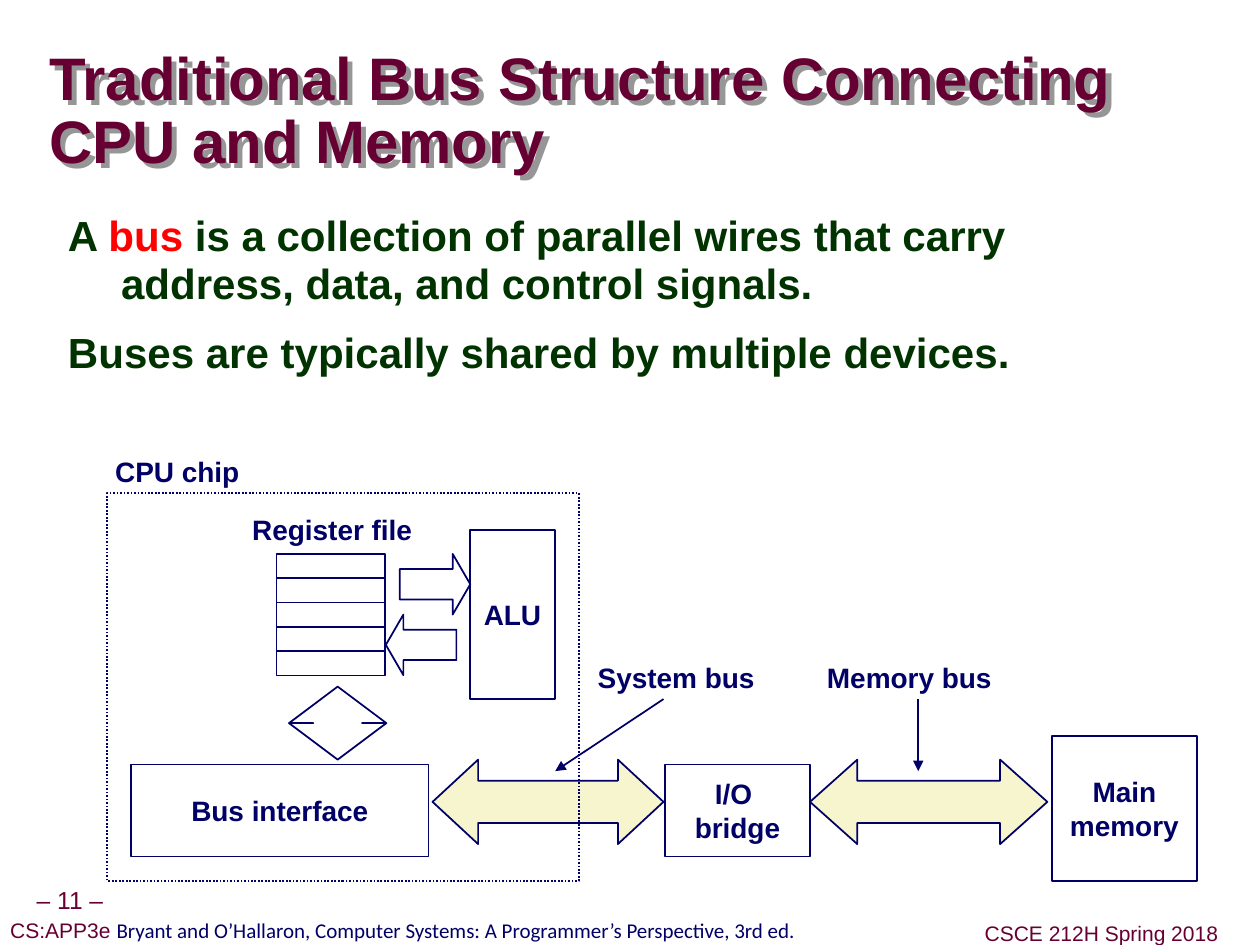
from dataclasses import dataclass
from lxml import etree
from pptx import Presentation
from pptx import util as u
from pptx.dml.color import RGBColor
from pptx.enum import dml, shapes, text
from pptx.oxml.ns import qn


@dataclass(frozen=True)
class Theme:
    wine: str = "660033"
    navy: str = "000066"
    green: str = "003300"
    red: str = "FF0000"
    cream: str = "F7F5CD"
    grey: str = "969696"
    face: str = "Arial"
    book: str = "Calibri"
    title: float = 34.2
    body: float = 24
    label: float = 16
    page: float = 14
    foot: float = 12


T = Theme()
KIND = shapes.MSO_SHAPE
ALIGN = text.PP_ALIGN
SIZE = (25.37, 19.02)

# Runs are (words, colour, points, face, bold); boxes are (left, top, width, height) in cm
TITLE = ("Traditional Bus Structure Connecting \vCPU and Memory", T.wine, T.title, T.face, True)
BODY = [
    [("A ", T.green), ("bus", T.red),
     (" is a collection of parallel wires that carry address, data, and control signals.", T.green)],
    [("Buses are typically shared by multiple devices.", T.green)],
]
FEET = [
    ((0.57, 17.75, 1.68, 0.79), [("– 11 –", T.wine, T.page, T.face, False)]),
    ((0, 18.39, 16.23, 0.71), [
        ("CS:APP3e ", T.wine, T.foot, T.face, False),
        ("Bryant and O’Hallaron, Computer Systems: A Programmer’s Perspective, 3rd ed.",
         T.navy, T.foot, T.book, False)]),
    ((19.69, 18.45, 4.98, 0.71), [("CSCE 212H Spring 2018", T.wine, T.foot, T.face, False)]),
]
UNITS = [
    ((21.18, 14.81, 2.92, 2.92), ["Main", "memory"]),
    ((13.39, 15.39, 2.92, 1.85), ["I/O ", "bridge"]),
    ((2.64, 15.39, 5.99, 1.85), ["Bus interface"]),
    ((9.47, 10.67, 1.7, 3.4), ["ALU"]),
]
# Each arrow ends with its adjustments; the upright one takes its head before its shaft
ARROWS = [
    (KIND.LEFT_RIGHT_ARROW, (16.31, 15.29, 4.78, 1.7), T.cream, (0.5, 0.56)),
    (KIND.LEFT_RIGHT_ARROW, (8.71, 15.29, 4.65, 1.7), T.cream, (0.5, 0.54)),
    (KIND.RIGHT_ARROW, (8.05, 11.15, 1.42, 1.22), None, (0.5, 0.29)),
    (KIND.LEFT_ARROW, (7.77, 12.37, 1.42, 1.22), None, (0.5, 0.29)),
    (KIND.UP_DOWN_ARROW, (5.82, 13.82, 1.96, 1.47), None, (0.2, 0.5)),
]
FILE, ROWS = (5.57, 11.15, 2.18, 0.49), 5
CHIP = (2.16, 9.93, 9.5, 7.8)
LABELS = [
    ((4.81, 10.19, 3.76, 0.94), "Register file"),
    ((2.06, 9.02, 3.02, 0.94), "CPU chip"),
    ((11.76, 13.16, 3.71, 0.94), "System bus"),
    ((16.38, 13.16, 3.86, 0.94), "Memory bus"),
]
LINES = [(13.36, 14.07, 11.18, 15.52), (18.49, 14.07, 18.49, 15.52)]


def cm(box):
    return [u.Cm(v) for v in box]


def put(item, form):
    for name, value in form.items():
        setattr(item, name, value)


def rgb(code):
    return RGBColor.from_string(code)


def write(frame, paras, pad, form, **look):
    """Fill a frame with paragraphs of runs; pad is (side, end) inset in cm."""
    side, end = cm(pad)
    put(frame, dict(margin_left=side, margin_right=side, margin_top=end, margin_bottom=end,
                    auto_size=text.MSO_AUTO_SIZE.NONE, **look))
    for i, runs in enumerate(paras):
        para = frame.add_paragraph() if i else frame.paragraphs[0]
        put(para, form)
        for words, hue, size, face, bold in runs:
            # a vertical tab splits a run into lines
            for j, part in enumerate(words.split("\v")):
                if j:
                    para.add_line_break()
                run = para.add_run()
                run.text = part
                put(run.font, dict(size=u.Pt(size), name=face, bold=bold))
                run.font.color.rgb = rgb(hue)


def label(frame, rows):
    paras = [[(row, T.navy, T.label, T.face, True)] for row in rows]
    write(frame, paras, (0.25, 0.13), dict(alignment=ALIGN.CENTER),
          word_wrap=False, vertical_anchor=text.MSO_ANCHOR.MIDDLE)


def ink(line):
    line.color.rgb = rgb(T.navy)
    line.width = u.Pt(1)


def draw(slide, kind, box, fill=None):
    form = slide.shapes.add_shape(kind, *cm(box))
    form.shadow.inherit = False
    ink(form.line)
    if fill:
        form.fill.solid()
        form.fill.fore_color.rgb = rgb(fill)
    else:
        form.fill.background()
    return form


def shade(form):
    """Give an unfilled shape a drop shadow, which its text then casts."""
    form.fill.background()
    glow = etree.SubElement(form._element.spPr, qn("a:effectLst"))
    drop = etree.SubElement(glow, qn("a:outerShdw"), dist=str(u.Cm(0.15)), dir="2700000",
                            algn="ctr", rotWithShape="0")
    etree.SubElement(drop, qn("a:srgbClr"), val=T.grey)


def head(slide):
    title = slide.shapes.title
    put(title, dict(zip(("left", "top", "width", "height"), cm((0.99, 1.22, 24.36, 2.11)))))
    write(title.text_frame, [[TITLE]], (0, 0), dict(alignment=ALIGN.LEFT, line_spacing=0.87),
          word_wrap=True, vertical_anchor=text.MSO_ANCHOR.MIDDLE)
    shade(title)

    frame = slide.shapes.add_textbox(*cm((1.12, 4.17, 21.89, 13.79))).text_frame
    paras = [[(*run, T.body, T.face, True) for run in runs] for runs in BODY]
    write(frame, paras, (0.25, 0.13), dict(line_spacing=0.95, space_before=u.Pt(12)),
          word_wrap=True, vertical_anchor=text.MSO_ANCHOR.TOP)
    for para in frame.paragraphs:
        props = para._p.get_or_add_pPr()
        props.set("marL", str(u.Cm(1.07)))
        props.set("indent", str(-u.Cm(1.07)))


def chart(slide):
    for box, rows in UNITS:
        label(draw(slide, KIND.RECTANGLE, box).text_frame, rows)
    left, top, wide, high = FILE
    for i in range(ROWS):
        draw(slide, KIND.RECTANGLE, (left, top + i * high, wide, high))
    for kind, box, fill, bends in ARROWS:
        arrow = draw(slide, kind, box, fill)
        for i, bend in enumerate(bends):
            arrow.adjustments[i] = bend
    draw(slide, KIND.RECTANGLE, CHIP).line.dash_style = dml.MSO_LINE.ROUND_DOT
    for box, words in LABELS:
        label(slide.shapes.add_textbox(*cm(box)).text_frame, [words])
    for ends in LINES:
        wire = slide.shapes.add_connector(shapes.MSO_CONNECTOR.STRAIGHT, *cm(ends))
        ink(wire.line)
        etree.SubElement(wire.line._get_or_add_ln(), qn("a:tailEnd"), type="triangle")
        etree.SubElement(wire._element.spPr, qn("a:effectLst"))


def main():
    deck = Presentation()
    deck.slide_width, deck.slide_height = cm(SIZE)
    slide = deck.slides.add_slide(deck.slide_layouts[5])
    for box, runs in FEET:
        write(slide.shapes.add_textbox(*cm(box)).text_frame, [runs], (0.13, 0.13),
              dict(alignment=ALIGN.CENTER, line_spacing=0.9),
              word_wrap=False, vertical_anchor=text.MSO_ANCHOR.MIDDLE)
    head(slide)
    chart(slide)
    deck.save("out.pptx")


if __name__ == "__main__":
    main()
